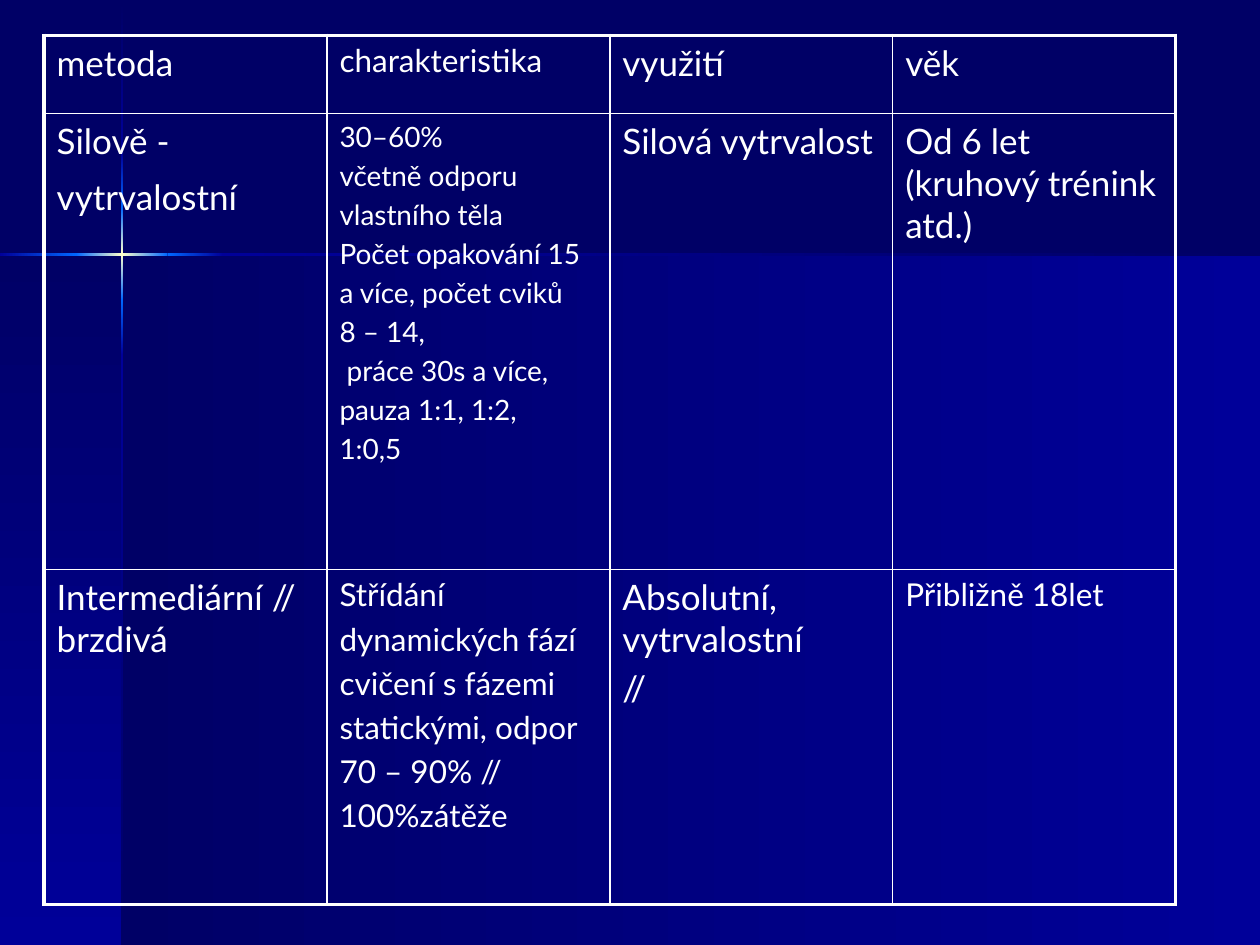
from itertools import pairwise

from lxml.etree import SubElement
from pptx import Presentation
from pptx.dml.color import RGBColor
from pptx.enum.shapes import MSO_SHAPE as Shape
from pptx.oxml.ns import qn
from pptx.util import Inches, Pt

NAVY = RGBColor(0x00, 0x00, 0x66)
BLUE = RGBColor(0x00, 0x00, 0x99)
BRIGHT = RGBColor(0x00, 0x66, 0xFF)
CREAM = RGBColor(0xFF, 0xFF, 0xCC)
WHITE = RGBColor(0xFF, 0xFF, 0xFF)

# Colours at the ends of a ray segment; the centre one glows in the middle
FADE_IN, RISE, GLOW = (NAVY, BLUE), (BLUE, BRIGHT), (BRIGHT, CREAM, BRIGHT)
FALL, FADE_OUT = (BRIGHT, BLUE), (BLUE, NAVY)

# Table rows of cells: (text size, paragraphs)
ROWS = [
    [(20, ["metoda"]), (18, ["charakteristika"]), (20, ["využití"]), (20, ["věk"])],
    [
        (20, ["Silově - vytrvalostní"]),
        (16, ["30–60%", "včetně odporu", "vlastního těla", "Počet opakování 15",
              "a více, počet cviků", "8 – 14,", " práce 30s a více,",
              "pauza 1:1, 1:2,", "1:0,5"]),
        (20, ["Silová vytrvalost"]),
        (20, ["Od 6 let (kruhový trénink atd.)"]),
    ],
    [
        (20, ["Intermediární //brzdivá"]),
        (18, ["Střídání", "dynamických fází", "cvičení s fázemi",
              "statickými, odpor", "70 – 90% //", "100%zátěže"]),
        (20, ["Absolutní, vytrvalostní", "//"]),
        (18, ["Přibližně 18let"]),
    ],
]


class Deck:
    """Style and current slide; all lengths are percent of the slide."""

    font, color = "Lato", WHITE
    thin, thick = 1, 2.25

    def __init__(self, prs):
        self.w, self.h = prs.slide_width, prs.slide_height
        self.s = prs.slides.add_slide(prs.slide_layouts[6])

    def x(self, share):
        return round(self.w * share / 100)

    def y(self, share):
        return round(self.h * share / 100)

    def background(self, color):
        fill = self.s.background.fill
        fill.solid()
        fill.fore_color.rgb = color

    def panel(self, left, top, right, bottom, colors, vertical=False):
        """Rectangle with an evenly spaced gradient."""
        sp = self.s.shapes.add_shape(
            Shape.RECTANGLE, self.x(left), self.y(top),
            self.x(right - left), self.y(bottom - top))
        sp.shadow.inherit = False
        sp.line.fill.background()
        sp.fill.gradient()
        sp.fill.gradient_angle = 270 if vertical else 0
        stops = sp._element.spPr.find(".//" + qn("a:gsLst"))
        stops.clear()
        for i, color in enumerate(colors):
            pos = 100000 * i // (len(colors) - 1)
            gs = SubElement(stops, qn("a:gs"), pos=str(pos))
            SubElement(gs, qn("a:srgbClr"), val=str(color))

    def ray(self, near, far, edges, fades, vertical=False):
        """Thin band from near to far, cut into segments at the edges."""
        for (start, end), colors in zip(pairwise(edges), fades):
            box = (near, start, far, end) if vertical else (start, near, end, far)
            self.panel(*box, colors, vertical)

    def borders(self, cell, widths):
        tc_pr = cell._tc.get_or_add_tcPr()
        for side, width in zip("LRTB", widths):
            ln = SubElement(tc_pr, qn(f"a:ln{side}"), w=str(int(Pt(width))))
            fill = SubElement(ln, qn("a:solidFill"))
            SubElement(fill, qn("a:srgbClr"), val=str(self.color))

    def cell_text(self, cell, size, lines):
        tf = cell.text_frame
        for i, line in enumerate(lines):
            p = tf.paragraphs[0] if i == 0 else tf.add_paragraph()
            p.text = line
            p.space_before = Pt(size * 0.2)
            p.font.size, p.font.name = Pt(size), self.font
            p.font.color.rgb = self.color

    def table(self, left, top, width, heights, rows):
        n_rows, n_cols = len(rows), len(rows[0])
        tbl = self.s.shapes.add_table(
            n_rows, n_cols, self.x(left), self.y(top),
            self.x(width), self.y(sum(heights))).table
        tbl.first_row = tbl.horz_banding = False
        for row, height in zip(tbl.rows, heights):
            row.height = self.y(height)
        for r, row in enumerate(rows):
            for c, (size, lines) in enumerate(row):
                cell = tbl.cell(r, c)
                outer = (c == 0, c == n_cols - 1, r == 0, r == n_rows - 1)
                self.borders(cell, [self.thick if o else self.thin for o in outer])
                cell.fill.background()
                self.cell_text(cell, size, lines)
        return tbl


def main():
    prs = Presentation()
    prs.slide_width, prs.slide_height = Inches(10), Inches(7.5)
    deck = Deck(prs)

    # Backdrop: two shaded panels under a star-like cross
    deck.background(NAVY)
    deck.panel(9.7, 26.93, 100, 100, (NAVY, BLUE))
    deck.panel(0, 26.93, 9.7, 100, (NAVY, BLUE), vertical=True)
    deck.ray(9.6, 9.8, (0.13, 16.13, 22, 31.73, 37.6, 100),
             (FADE_IN, RISE, GLOW, FALL, FADE_OUT), vertical=True)
    deck.ray(26.8, 27.07, (0, 6.05, 13.3, 17.7, 100),
             (RISE, GLOW, FALL, FADE_OUT))

    # Table of strength training methods
    tbl = deck.table(3.5, 3.73, 89.8, (8.27, 48.27, 35.47), ROWS)

    # A larger closing space makes the last line of the method name taller
    r = tbl.cell(1, 0).text_frame.paragraphs[0].add_run()
    r.text = " "
    r.font.size = Pt(28)

    prs.save("out.pptx")


if __name__ == "__main__":
    main()
